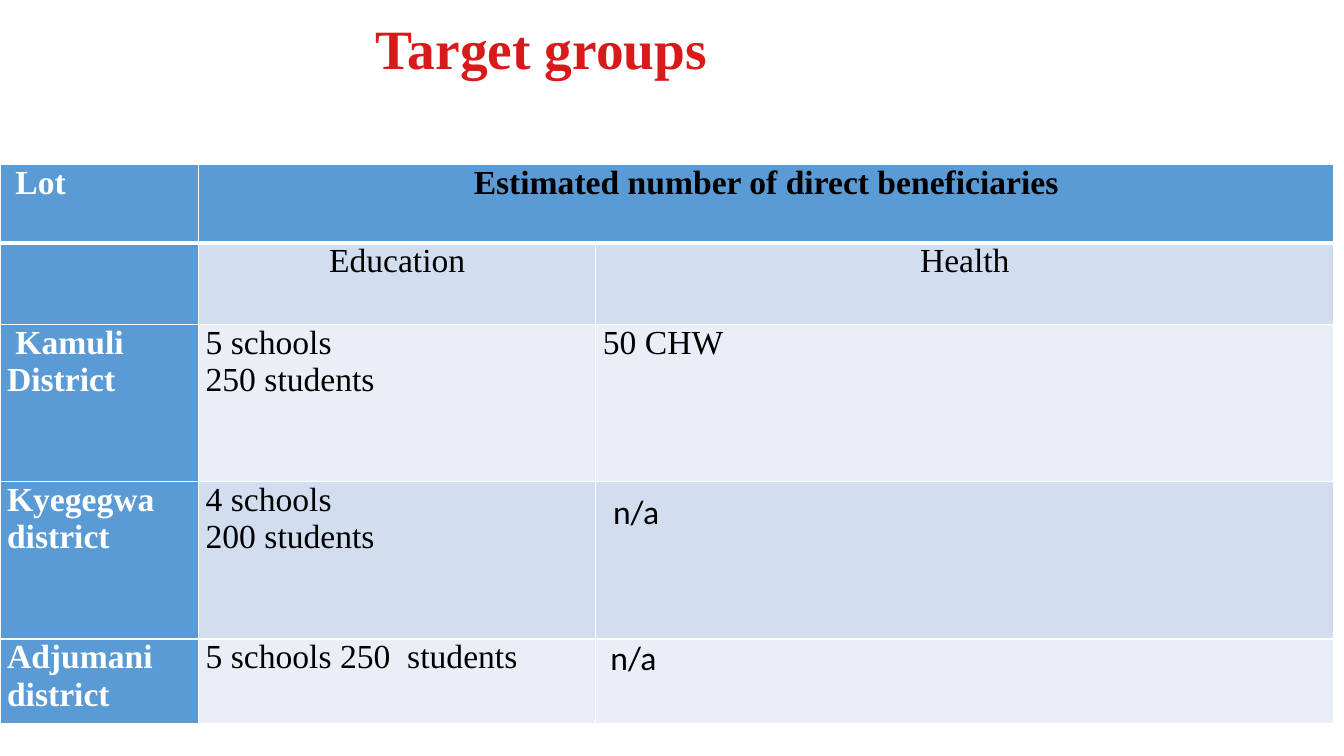
from lxml import etree
from pptx import Presentation
from pptx.dml.color import RGBColor
from pptx.enum.text import MSO_ANCHOR, PP_ALIGN
from pptx.oxml.ns import qn
from pptx.util import Inches, Pt

LEFT = PP_ALIGN.LEFT
CENTER = PP_ALIGN.CENTER
MIDDLE = MSO_ANCHOR.MIDDLE

RED = RGBColor(0xD8, 0x1A, 0x1A)
BLUE = RGBColor(0x5B, 0x9B, 0xD5)
PALE = RGBColor(0xD2, 0xDE, 0xEF)
LIGHT = RGBColor(0xEA, 0xEF, 0xF7)
WHITE = RGBColor(0xFF, 0xFF, 0xFF)
BLACK = RGBColor(0, 0, 0)

SERIF = "Times New Roman"
SANS = "Calibri"

WIDTHS = [1.97, 3.94, 7.32]
HEIGHTS = [0.78, 0.81, 1.56, 1.56, 0.84]
ROWS = [
    [" Lot", "Estimated number of direct beneficiaries", ""],
    ["", "Education", "Health"],
    [" Kamuli District", "5 schools\n250 students", "50 CHW"],
    ["Kyegegwa district", "4 schools\n200 students", "n/a"],
    ["Adjumani district", "5 schools 250  students", " n/a"],
]


def add_run(para, text, size, font, color, bold):
    run = para.add_run()
    run.text = text
    run.font.size = Pt(size)
    run.font.name = font
    run.font.color.rgb = color
    run.font.bold = bold


def put_text(frame, text, size=24, font=SERIF, color=BLACK, bold=False,
             align=LEFT, spacing=None, lead=None):
    for i, line in enumerate(text.split("\n")):
        para = frame.add_paragraph() if i else frame.paragraphs[0]
        para.alignment = align
        if spacing:
            para.line_spacing = spacing
        if lead:
            add_run(para, " ", lead, font, color, bold)
        add_run(para, line, size, font, color, bold)


def add_title(slide):
    box = slide.shapes.add_textbox(Inches(3.63), Inches(0.14), Inches(4.24), Inches(0.74))
    box.text_frame.word_wrap = True
    box.text_frame.vertical_anchor = MIDDLE
    put_text(box.text_frame, "Target groups", size=39.6, color=RED, bold=True, spacing=0.9)


def set_edges(cell, row):
    props = cell._tc.get_or_add_tcPr()
    thick = {(0, "lnB"), (1, "lnT")}
    for side in ("lnL", "lnR", "lnT", "lnB"):
        width = Pt(3) if (row, side) in thick else Pt(1)
        edge = etree.SubElement(props, qn(f"a:{side}"), w=str(width))
        fill = etree.SubElement(edge, qn("a:solidFill"))
        etree.SubElement(fill, qn("a:srgbClr"), val=str(WHITE))


def fill_cell(cell, row, col, text):
    set_edges(cell, row)
    cell.fill.solid()
    band = PALE if row % 2 else LIGHT
    cell.fill.fore_color.rgb = BLUE if row == 0 or col == 0 else band
    cell.margin_left = cell.margin_right = Inches(0.07)
    cell.margin_top = cell.margin_bottom = 0
    if not text:
        return
    absent = text.endswith("n/a")
    put_text(cell.text_frame, text,
             font=SANS if absent else SERIF,
             color=BLACK if col else WHITE,
             bold=row == 0 or col == 0,
             align=CENTER if row < 2 and col else LEFT,
             lead=32 if text == "n/a" else None)


def add_grid(slide):
    frame = slide.shapes.add_table(len(ROWS), len(WIDTHS), Inches(0), Inches(1.63),
                                   Inches(sum(WIDTHS)), Inches(sum(HEIGHTS)))
    table = frame.table
    for column, width in zip(table.columns, WIDTHS):
        column.width = Inches(width)
    for line, height in zip(table.rows, HEIGHTS):
        line.height = Inches(height)
    table.cell(0, 1).merge(table.cell(0, 2))
    for row, texts in enumerate(ROWS):
        for col, text in enumerate(texts):
            fill_cell(table.cell(row, col), row, col, text)


def main():
    deck = Presentation()
    deck.slide_width = Inches(13.33)
    deck.slide_height = Inches(7.5)
    slide = deck.slides.add_slide(deck.slide_layouts[6])
    add_title(slide)
    add_grid(slide)
    deck.save("out.pptx")


if __name__ == "__main__":
    main()
